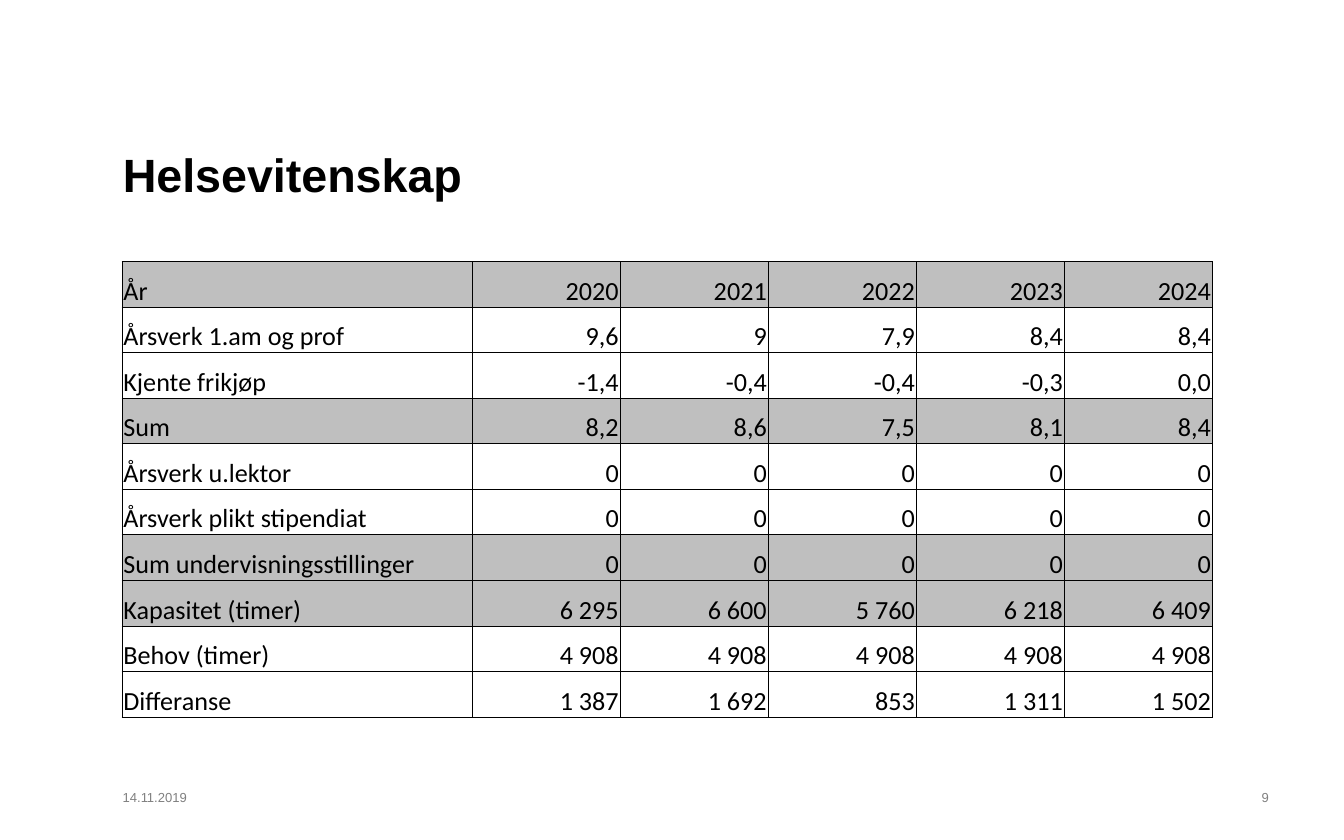
from lxml import etree
from pptx import Presentation
from pptx.dml.color import RGBColor
from pptx.enum.text import MSO_ANCHOR, PP_ALIGN
from pptx.oxml.ns import qn
from pptx.util import Inches, Pt

LEFT, RIGHT = PP_ALIGN.LEFT, PP_ALIGN.RIGHT
TOP, MIDDLE, BOTTOM = MSO_ANCHOR.TOP, MSO_ANCHOR.MIDDLE, MSO_ANCHOR.BOTTOM

COLORS = {"ink": "000000", "muted": "808080", "band": "BFBFBF"}
GRID_COLUMNS, GRID_ROWS = 120, 75
YEARS = 5

STAFFING = [
    ("År", "2020", "2021", "2022", "2023", "2024"),
    ("Årsverk 1.am og prof", "9,6", "9", "7,9", "8,4", "8,4"),
    ("Kjente frikjøp", "-1,4", "-0,4", "-0,4", "-0,3", "0,0"),
    ("Sum", "8,2", "8,6", "7,5", "8,1", "8,4"),
    ("Årsverk u.lektor", *["0"] * YEARS),
    ("Årsverk plikt stipendiat", *["0"] * YEARS),
    ("Sum undervisningsstillinger", *["0"] * YEARS),
    ("Kapasitet (timer)", "6 295", "6 600", "5 760", "6 218", "6 409"),
    ("Behov (timer)", *["4 908"] * YEARS),
    ("Differanse", "1 387", "1 692", "853", "1 311", "1 502"),
]
SHADED = {"År", "Sum", "Sum undervisningsstillinger", "Kapasitet (timer)"}


def write(frame, text, font="Arial", size=14, color="ink", bold=False, align=LEFT):
    paragraph = frame.paragraphs[0]
    paragraph.alignment = align
    run = paragraph.add_run()
    run.text = text
    run.font.name = font
    run.font.size = Pt(size)
    run.font.bold = bold
    run.font.color.rgb = RGBColor.from_string(COLORS[color])


class SlideBuilder:
    def __init__(self, presentation):
        self.slide = presentation.slides.add_slide(presentation.slide_layouts[6])
        self.column = presentation.slide_width / GRID_COLUMNS
        self.row = presentation.slide_height / GRID_ROWS

    def place(self, left, top, width, height):
        return (round(left * self.column), round(top * self.row),
                round(width * self.column), round(height * self.row))

    def text(self, area, text, anchor=TOP, **style):
        frame = self.slide.shapes.add_textbox(*self.place(*area)).text_frame
        frame.word_wrap = True
        frame.vertical_anchor = anchor
        frame.margin_left = frame.margin_right = Inches(0.08)
        frame.margin_top = frame.margin_bottom = Inches(0.04)
        write(frame, text, **style)

    def border(self, cell):
        properties = cell._tc.get_or_add_tcPr()
        for side in ("lnL", "lnR", "lnT", "lnB"):
            line = etree.SubElement(properties, qn(f"a:{side}"), w=str(Pt(0.5)))
            fill = etree.SubElement(line, qn("a:solidFill"))
            etree.SubElement(fill, qn("a:srgbClr"), val=COLORS["ink"])

    def cell(self, cell, text, shaded, align):
        cell.margin_left = cell.margin_right = cell.margin_top = Inches(0.01)
        cell.margin_bottom = 0
        cell.vertical_anchor = BOTTOM
        self.border(cell)
        if shaded:
            cell.fill.solid()
            cell.fill.fore_color.rgb = RGBColor.from_string(COLORS["band"])
        else:
            cell.fill.background()
        write(cell.text_frame, text, font="Calibri", align=align)

    def table(self, left, top, widths, row_height, records, shaded):
        area = self.place(left, top, sum(widths), row_height * len(records))
        table = self.slide.shapes.add_table(len(records), len(widths), *area).table
        table.first_row = table.horz_banding = False
        for column, width in zip(table.columns, widths):
            column.width = round(width * self.column)
        for row, record in zip(table.rows, records):
            row.height = round(row_height * self.row)
            for index, (cell, text) in enumerate(zip(row.cells, record)):
                self.cell(cell, text, record[0] in shaded, RIGHT if index else LEFT)


def main():
    presentation = Presentation()
    presentation.slide_width = Inches(10)
    presentation.slide_height = Inches(6.25)
    builder = SlideBuilder(presentation)
    builder.text((10, 9.25, 104, 12.5), "Helsevitenskap", anchor=MIDDLE, size=25, bold=True)
    builder.table(10.9, 23.35, [31.25] + [13.22] * YEARS, 4.07, STAFFING, SHADED)
    builder.text((10, 70, 25, 5), "14.11.2019", size=7, color="muted")
    builder.text((105.25, 70, 9, 5), "9", size=7, color="muted", align=RIGHT)
    presentation.save("out.pptx")


if __name__ == "__main__":
    main()
